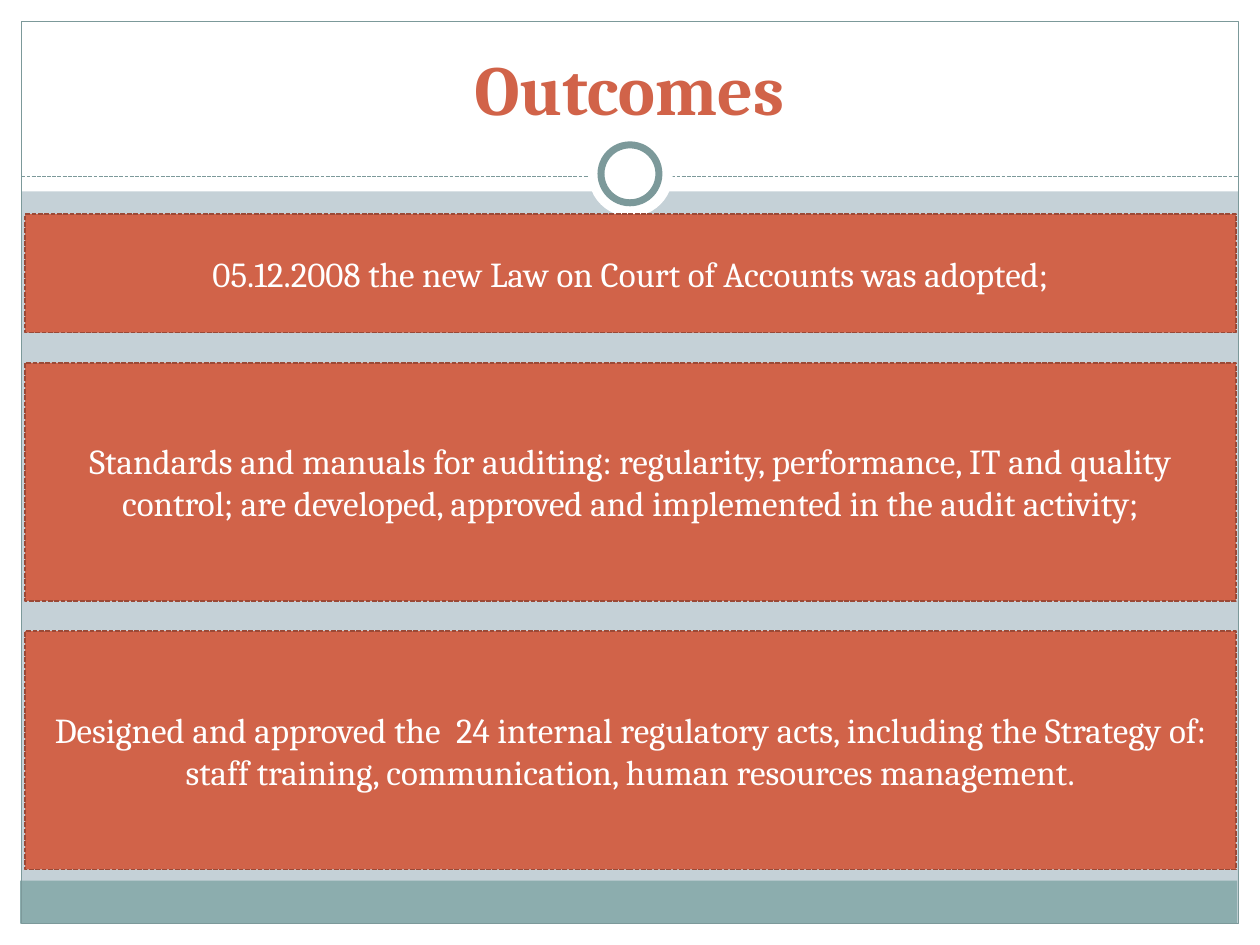
"""Build the Outcomes slide: a framed title above three statement panels."""
from dataclasses import dataclass

from lxml import etree
from pptx import Presentation
from pptx.dml.color import RGBColor
from pptx.enum.dml import MSO_LINE
from pptx.enum.shapes import MSO_CONNECTOR, MSO_SHAPE
from pptx.enum.text import MSO_ANCHOR, MSO_AUTO_SIZE, PP_ALIGN
from pptx.oxml.ns import qn
from pptx.util import Inches, Pt

RECT, OVAL = MSO_SHAPE.RECTANGLE, MSO_SHAPE.OVAL
STRAIGHT = MSO_CONNECTOR.STRAIGHT
DASH = MSO_LINE.SQUARE_DOT
CENTER = PP_ALIGN.CENTER
MIDDLE, BOTTOM = MSO_ANCHOR.MIDDLE, MSO_ANCHOR.BOTTOM
NO_FIT = MSO_AUTO_SIZE.NONE


@dataclass(frozen=True)
class Theme:
    font: str = "Cambria"
    background: RGBColor = RGBColor.from_string("C5D1D7")
    white: RGBColor = RGBColor.from_string("FFFFFF")
    footer: RGBColor = RGBColor.from_string("8CADAE")
    frame: RGBColor = RGBColor.from_string("7C999A")
    accent: RGBColor = RGBColor.from_string("D16349")
    panel_line: RGBColor = RGBColor.from_string("9B4936")
    title_size: Pt = Pt(40)
    body_size: Pt = Pt(20)


theme = Theme()
prs = Presentation()
prs.slide_width, prs.slide_height = Inches(10), Inches(7.5)
s = prs.slides.add_slide(prs.slide_layouts[5])
s.background.fill.solid()
s.background.fill.fore_color.rgb = theme.background


def add_box(kind, box, fill=None, line=None, width=0.75):
    sp = s.shapes.add_shape(kind, *map(Inches, box))
    sp.shadow.inherit = False
    if fill is None:
        sp.fill.background()
    else:
        sp.fill.solid()
        sp.fill.fore_color.rgb = fill
    if line is None:
        sp.line.fill.background()
    else:
        sp.line.color.rgb = line
        sp.line.width = Pt(width)
    return sp


def write(sp, text, size, color, anchor, bold=False):
    tf = sp.text_frame
    tf.word_wrap = True
    tf.auto_size = NO_FIT
    tf.vertical_anchor = anchor
    p = tf.paragraphs[0]
    p.alignment = CENTER
    r = p.add_run()
    r.text = text
    r.font.name = theme.font
    r.font.size = size
    r.font.bold = bold
    r.font.color.rgb = color


for margin in [(0, 7.33, 10, 0.17), (0, 0, 10, 1.52),
               (0, 0, 0.17, 7.5), (9.83, 0, 0.17, 7.5)]:
    add_box(RECT, margin, theme.white)
add_box(RECT, (0.16, 6.99, 9.66, 0.34), theme.footer)
add_box(RECT, (0.17, 0.17, 9.66, 7.16), line=theme.frame)

rule = s.shapes.add_connector(
    STRAIGHT, Inches(0.17), Inches(1.4), Inches(9.83), Inches(1.4))
rule.line.color.rgb = theme.frame
rule.line.width = Pt(0.75)
rule.line.dash_style = DASH
etree.SubElement(rule._element.spPr, qn("a:effectLst"))

add_box(OVAL, (4.67, 1.05, 0.67, 0.67), theme.white)
ring = add_box(OVAL, (4.77, 1.15, 0.46, 0.46), theme.white, theme.frame, 4)

title = s.shapes.title
title.left, title.top = Inches(0.33), Inches(0.25)
title.width, title.height = Inches(9.33), Inches(0.83)
write(title, "Outcomes", theme.title_size, theme.accent, BOTTOM, bold=True)
ring._element.addnext(title._element)

panels = [
    (0.94, "05.12.2008 the new Law on Court of Accounts was adopted;"),
    (1.89, "Standards and manuals for auditing: regularity, performance, IT "
           "and quality control; are developed, approved and implemented in "
           "the audit activity;"),
    (1.89, "Designed and approved the  24 internal regulatory acts, including "
           "the Strategy of: staff training, communication, human resources "
           "management."),
]
top, gap = 1.7, 0.24
for height, text in panels:
    panel = add_box(RECT, (0.2, top, 9.61, height),
                    theme.accent, theme.panel_line, 0.9)
    panel.line.dash_style = DASH
    write(panel, text, theme.body_size, theme.white, MIDDLE)
    top += height + gap

prs.save("out.pptx")
